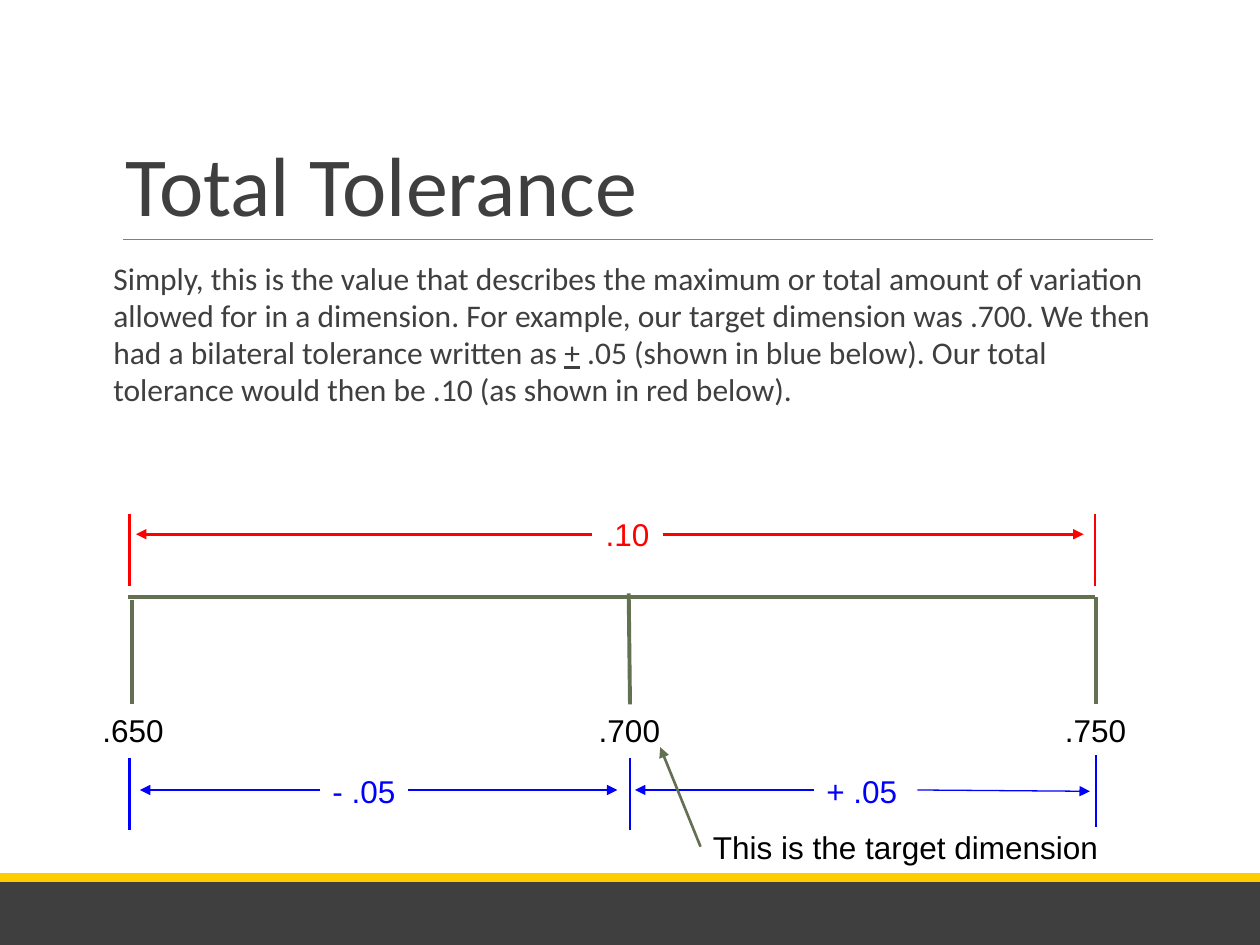
import pptx
import pptx.util
import pptx.dml.color
import pptx.enum.shapes
import pptx.enum.text
from lxml import etree

WIDE, HIGH = 10, 7.5
DARK, GOLD, GRAY, OLIVE = "3F3F3F", "FFCC00", "7F7F7F", "637052"
RED, BLUE, BLACK = "FF0000", "0000FF", "000000"
MIDDLE = pptx.enum.text.MSO_ANCHOR.MIDDLE
BOTTOM = pptx.enum.text.MSO_ANCHOR.BOTTOM
TOP = pptx.enum.text.MSO_ANCHOR.TOP
LEFT, CENTER = pptx.enum.text.PP_ALIGN.LEFT, pptx.enum.text.PP_ALIGN.CENTER

TITLE = [("Total Tolerance", False)]
BODY = [
    ("Simply, this is the value that describes the maximum or total amount of "
     "variation allowed for in a dimension. For example, our target dimension "
     "was .700. We then had a bilateral tolerance written as ", False),
    ("+", True),
    (" .05 (shown in blue below). Our total tolerance would then be .10 "
     "(as shown in red below).", False),
]

# Bands across the foot: top, height, colour
BANDS = [(7, 0.5, DARK), (6.93, 0.07, GOLD)]

# Scale of the drawing: x of the low, target and high values
LOW, MID, HIGH_X = 1.03, 5, 8.7
BAR, FOOT = 4.74, 5.59            # top bar and foot of its legs
TOTAL, PART = 4.24, 6.27          # heights of the red and blue arrows

# Marks on the scale: label, centre
VALUES = [(".650", 1.055), (".700", 4.995), (".750", 8.695)]

# Other labels: text, left, top, width, height, colour, alignment
LABELS = [
    (".10", 4.7, 4.07, 0.56, 0.33, RED, CENTER),
    ("- .05", 2.54, 5.99, 0.71, 0.57, BLUE, LEFT),
    ("+ .05", 6.46, 5.99, 0.81, 0.57, BLUE, LEFT),
    ("This is the target dimension", 5.56, 6.44, 3.61, 0.57, BLACK, LEFT),
]

# Plain lines: x1, y1, x2, y2, colour, weight
LINES = [
    (0.98, 1.9, 9.15, 1.9, GRAY, 0.75),
    (1.02, BAR, 8.69, BAR, OLIVE, 2.25),
    (1.05, FOOT, 1.05, 4.76, OLIVE, 2.25),
    (MID, FOOT, 4.99, 4.71, OLIVE, 2.25),
    (HIGH_X, FOOT, HIGH_X, BAR, OLIVE, 2.25),
]
# Witness lines: x, foot, colour
TICK = 0.57
TICKS = [(LOW, 4.65, RED), (8.69, 4.65, RED),
         (LOW, 6.59, BLUE), (MID, 6.59, BLUE), (HIGH_X, 6.56, BLUE)]

# Arrows, with the head at the second point
ARROWS = [
    (4.7, TOTAL, 1.08, TOTAL, RED, 1.5),
    (5.26, TOTAL, 8.6, TOTAL, RED, 1.5),
    (2.54, PART, 1.11, PART, BLUE, 0.75),
    (3.24, PART, 4.9, PART, BLUE, 0.75),
    (6.46, PART, 5.04, PART, BLUE, 0.75),
    (7.28, PART, 8.65, 6.28, BLUE, 0.75),
    (5.56, 6.72, 5.24, 5.93, OLIVE, 1.5),
]


def inch(*sizes):
    return [pptx.util.Inches(size) for size in sizes]


def paint(tone):
    return pptx.dml.color.RGBColor.from_string(tone)


def add_line(slide, x1, y1, x2, y2, tone, weight, head=False):
    kind = pptx.enum.shapes.MSO_CONNECTOR.STRAIGHT
    line = slide.shapes.add_connector(kind, *inch(x1, y1, x2, y2))
    line.line.color.rgb = paint(tone)
    line.line.width = pptx.util.Pt(weight)
    props = line._element.spPr
    space = "{%s}" % props.nsmap["a"]
    if head:
        etree.SubElement(props.find(space + "ln"), space + "tailEnd", type="triangle")
    etree.SubElement(props, space + "effectLst")


def add_text(slide, box, runs, face, size, tone, anchor, align=LEFT,
             side=0.1, edge=0.1, pitch=None):
    frame = slide.shapes.add_textbox(*inch(*box)).text_frame
    frame.word_wrap = True
    frame.vertical_anchor = anchor
    frame.margin_left, frame.margin_right = inch(side, side)
    frame.margin_top, frame.margin_bottom = inch(edge, edge)
    para = frame.paragraphs[0]
    para.alignment = align
    para.line_spacing = pitch
    for text, under in runs:
        run = para.add_run()
        run.text = text
        run.font.name = face
        run.font.size = pptx.util.Pt(size)
        run.font.color.rgb = paint(tone)
        if under:
            run.font.underline = True


def main():
    deck = pptx.Presentation()
    deck.slide_width, deck.slide_height = inch(WIDE, HIGH)
    slide = deck.slides.add_slide(deck.slide_layouts[6])

    for top, tall, tone in BANDS:
        kind = pptx.enum.shapes.MSO_SHAPE.RECTANGLE
        band = slide.shapes.add_shape(kind, *inch(0, top, WIDE, tall))
        band.shadow.inherit = False
        band.fill.solid()
        band.fill.fore_color.rgb = paint(tone)
        band.line.fill.background()

    add_text(slide, (0.9, 0.31, 8.25, 1.59), TITLE, "Calibri", 48, DARK,
             BOTTOM, edge=0.05, pitch=0.85)
    for line in LINES:
        add_line(slide, *line)
    for x, foot, tone in TICKS:
        add_line(slide, x, foot, x, foot - TICK, tone, 1.5)
    for arrow in ARROWS:
        add_line(slide, *arrow, head=True)

    wide = 0.81
    marks = [(text, x - wide / 2, FOOT, wide, 0.4, BLACK, CENTER)
             for text, x in VALUES]
    for text, *box, tone, align in marks + LABELS:
        add_text(slide, box, [(text, False)], "Arial", 18, tone, MIDDLE, align)
    add_text(slide, (0.9, 2.02, 8.25, 4.4), BODY, "Calibri", 18, DARK,
             TOP, side=0, edge=0.05, pitch=0.98)
    deck.save("out.pptx")


if __name__ == "__main__":
    main()
